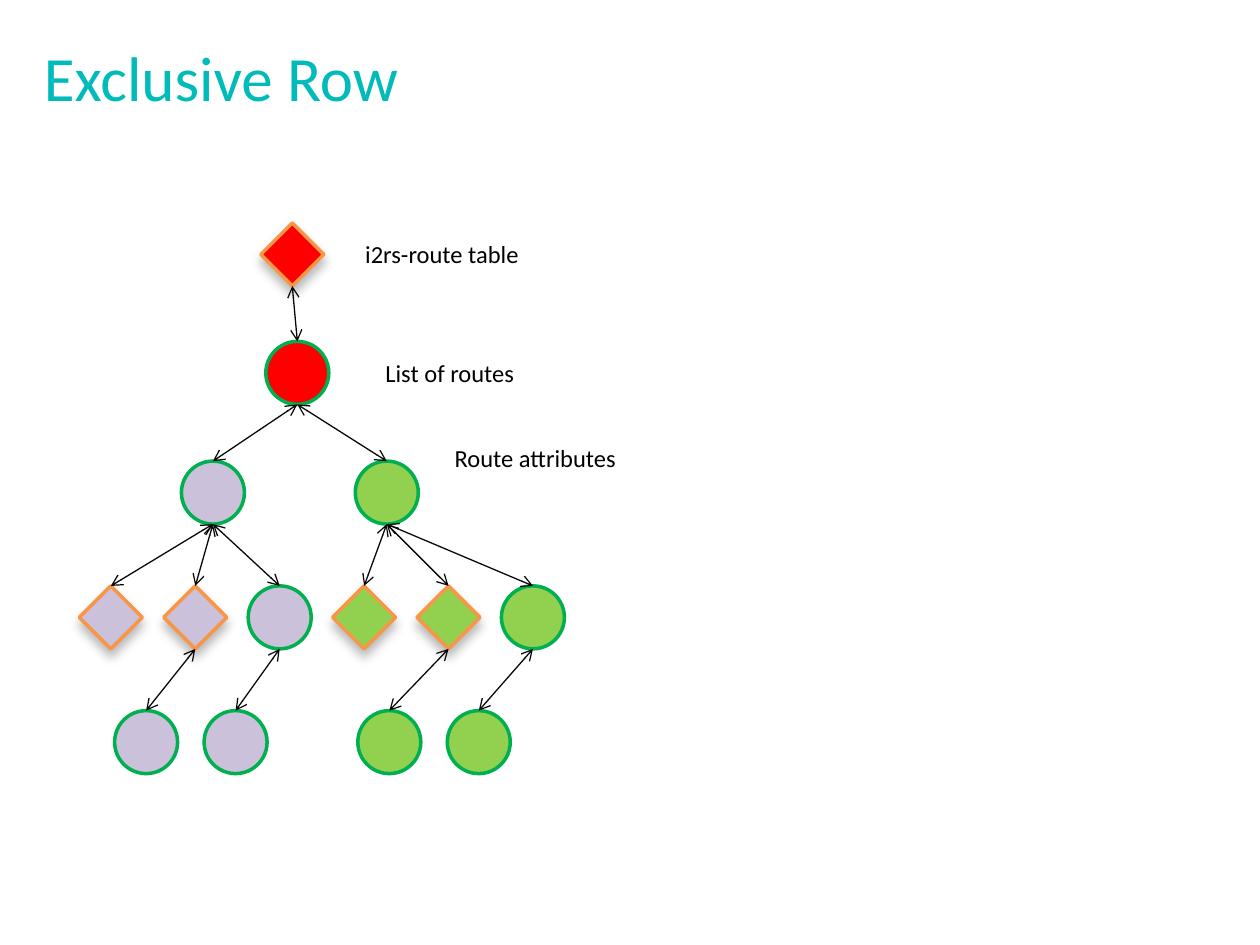
from lxml import etree
from pptx import Presentation
from pptx.dml.color import RGBColor
from pptx.enum.shapes import MSO_CONNECTOR, MSO_SHAPE
from pptx.enum.text import MSO_ANCHOR
from pptx.oxml import parse_xml
from pptx.oxml.ns import nsdecls, qn
from pptx.util import Inches, Pt

COLORS = {
    "title": "01BBBB",
    "text": "000000",
    "arrow": "080808",
    "red": "FF0000",
    "lilac": "CCC1DA",
    "green": "92D050",
    "circle_line": "00B050",
    "diamond_line": "F79646",
}
FONT = "Calibri"
NODE_SIZE = 0.5
LEVEL_TOPS = [1.77, 2.71, 3.66, 4.65, 5.64]
LEAF_STEP = 0.67

TITLE = ("Exclusive Row", 0.25, 0.28, 9.39, 0.76)
LABELS = [
    ("i2rs-route table", 2.8, 1.85, 1.68, 0.34),
    ("List of routes", 2.96, 2.79, 1.76, 0.34),
    ("Route attributes", 3.51, 3.47, 1.76, 0.34),
]
NODES = {
    "table": ("diamond", "red", 2.07, 0),
    "routes": ("circle", "red", 2.11, 1),
}
EDGES = [("table", "routes")]
BRANCHES = [
    ("lilac", 1.44, 0.63, [0.91, 1.62]),
    ("green", 2.82, 2.64, [2.84, 3.55]),
]
ATTRIBUTE_KINDS = ["diamond", "diamond", "circle"]

for color, route_left, first_left, child_lefts in BRANCHES:
    route = f"{color} route"
    NODES[route] = ("circle", color, route_left, 2)
    EDGES.append(("routes", route))
    for index, kind in enumerate(ATTRIBUTE_KINDS):
        attribute = f"{color} attribute {index}"
        NODES[attribute] = (kind, color, first_left + index * LEAF_STEP, 3)
        EDGES.append((route, attribute))
    for index, left in enumerate(child_lefts, start=1):
        child = f"{color} child {index}"
        NODES[child] = ("circle", color, left, 4)
        EDGES.append((f"{color} attribute {index}", child))


def rgb(name):
    return RGBColor.from_string(COLORS[name])


def add_text(page, text, left, top, width, height, size, color):
    box = page.shapes.add_textbox(Inches(left), Inches(top), Inches(width), Inches(height))
    box.text_frame.word_wrap = True
    box.text_frame.text = text
    font = box.text_frame.paragraphs[0].runs[0].font
    font.name = FONT
    font.size = Pt(size)
    font.color.rgb = rgb(color)
    return box


def add_shadow(shape):
    effects = shape._element.spPr.find(qn("a:effectLst"))
    effects.append(parse_xml(
        f'<a:outerShdw {nsdecls("a")} blurRad="{Pt(6)}" dist="{Pt(4)}" dir="5400000" rotWithShape="0">'
        '<a:srgbClr val="000000"><a:alpha val="27000"/></a:srgbClr></a:outerShdw>'
    ))


def add_node(page, kind, color, left, level):
    preset = MSO_SHAPE.DIAMOND if kind == "diamond" else MSO_SHAPE.OVAL
    node = page.shapes.add_shape(
        preset, Inches(left), Inches(LEVEL_TOPS[level]), Inches(NODE_SIZE), Inches(NODE_SIZE)
    )
    node.fill.solid()
    node.fill.fore_color.rgb = rgb(color)
    node.line.color.rgb = rgb(f"{kind}_line")
    node.line.width = Pt(2)
    node.shadow.inherit = False
    if kind == "diamond":
        add_shadow(node)
    return node


def add_arrow(page, parent, child):
    arrow = page.shapes.add_connector(
        MSO_CONNECTOR.STRAIGHT,
        child.left + child.width // 2, child.top,
        parent.left + parent.width // 2, parent.top + parent.height,
    )
    arrow.line.color.rgb = rgb("arrow")
    arrow.line.width = Pt(0.75)
    line = arrow.line._get_or_add_ln()
    for end in ("a:headEnd", "a:tailEnd"):
        etree.SubElement(line, qn(end), type="arrow")
    etree.SubElement(arrow._element.spPr, qn("a:effectLst"))


def main():
    deck = Presentation()
    deck.slide_width, deck.slide_height = Inches(10), Inches(7.5)
    page = deck.slides.add_slide(deck.slide_layouts[6])

    title = add_text(page, *TITLE, 36, "title")
    title.text_frame.vertical_anchor = MSO_ANCHOR.MIDDLE
    title.text_frame.paragraphs[0].line_spacing = 0.8

    shapes = {name: add_node(page, *node) for name, node in NODES.items()}
    for parent, child in EDGES:
        add_arrow(page, shapes[parent], shapes[child])
    for label in LABELS:
        add_text(page, *label, 14, "text")

    deck.save("out.pptx")


if __name__ == "__main__":
    main()
